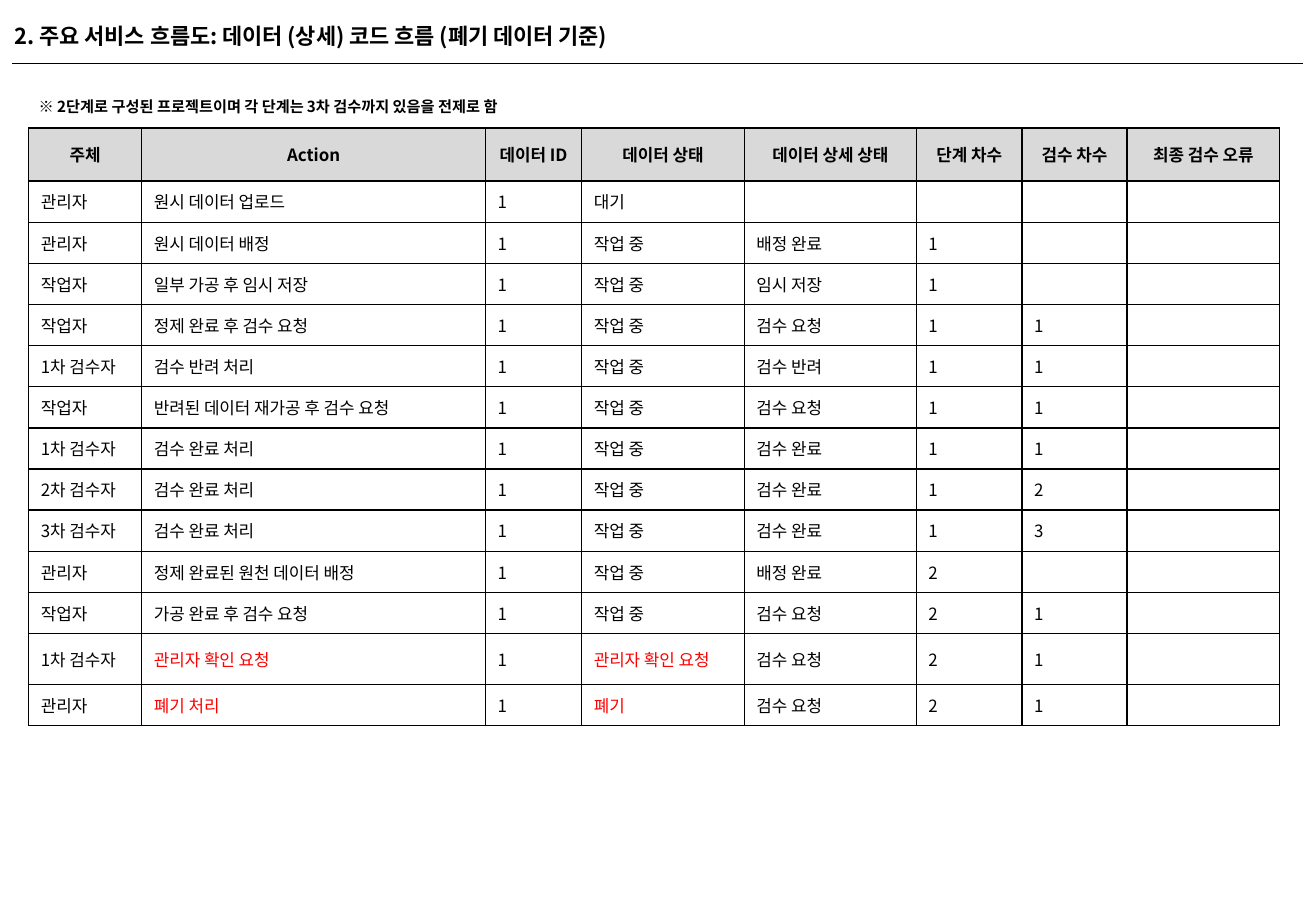
"""Build the slide that lists the data code flow for discarded data."""

from dataclasses import dataclass

from lxml.etree import SubElement
from pptx import Presentation
from pptx.dml.color import RGBColor
from pptx.enum.shapes import MSO_CONNECTOR as Connector
from pptx.enum.text import MSO_ANCHOR as Anchor, MSO_AUTO_SIZE as AutoSize, PP_ALIGN as Align
from pptx.oxml.ns import qn
from pptx.util import Pt

BLACK = RGBColor(0x00, 0x00, 0x00)
RED = RGBColor(0xFF, 0x00, 0x00)
GREY = RGBColor(0xD9, 0xD9, 0xD9)
FONT = "Noto Sans CJK KR"

TITLE = "2. 주요 서비스 흐름도: 데이터 (상세) 코드 흐름 (폐기 데이터 기준)"
NOTE = "※ 2단계로 구성된 프로젝트이며 각 단계는 3차 검수까지 있음을 전제로 함"

TEXT_SIZE = 10
HEADER_HEIGHT = 31.4
ROW_HEIGHT = 24.4
TALL_ROW_HEIGHT = 30.2
BORDER_WIDTH = 1


@dataclass(frozen=True)
class Column:
    heading: str
    width: float


@dataclass(frozen=True)
class Step:
    actor: str
    action: str
    state: str
    detail: str = ""
    stage: str = ""
    review: str = ""
    flagged: bool = False
    height: float = ROW_HEIGHT

    def texts(self) -> list[str]:
        return [self.actor, self.action, "1", self.state, self.detail, self.stage, self.review, ""]

    def colors(self) -> list[RGBColor]:
        accent = RED if self.flagged else BLACK
        return [BLACK, accent, BLACK, accent] + [BLACK] * 4


COLUMNS = [
    Column("주체", 67),
    Column("Action", 203.8),
    Column("데이터 ID", 57),
    Column("데이터 상태", 96.4),
    Column("데이터 상세 상태", 102),
    Column("단계 차수", 62.6),
    Column("검수 차수", 62.2),
    Column("최종 검수 오류", 90.6),
]

STEPS = [
    Step("관리자", "원시 데이터 업로드", "대기"),
    Step("관리자", "원시 데이터 배정", "작업 중", "배정 완료", "1"),
    Step("작업자", "일부 가공 후 임시 저장", "작업 중", "임시 저장", "1"),
    Step("작업자", "정제 완료 후 검수 요청", "작업 중", "검수 요청", "1", "1"),
    Step("1차 검수자", "검수 반려 처리", "작업 중", "검수 반려", "1", "1"),
    Step("작업자", "반려된 데이터 재가공 후 검수 요청", "작업 중", "검수 요청", "1", "1"),
    Step("1차 검수자", "검수 완료 처리", "작업 중", "검수 완료", "1", "1"),
    Step("2차 검수자", "검수 완료 처리", "작업 중", "검수 완료", "1", "2"),
    Step("3차 검수자", "검수 완료 처리", "작업 중", "검수 완료", "1", "3"),
    Step("관리자", "정제 완료된 원천 데이터 배정", "작업 중", "배정 완료", "2"),
    Step("작업자", "가공 완료 후 검수 요청", "작업 중", "검수 요청", "2", "1"),
    Step("1차 검수자", "관리자 확인 요청", "관리자 확인 요청", "검수 요청", "2", "1",
         flagged=True, height=TALL_ROW_HEIGHT),
    Step("관리자", "폐기 처리", "폐기", "검수 요청", "2", "1", flagged=True),
]


def write(frame, text: str, size: float, color: RGBColor = BLACK, bold: bool = False,
          align: Align = Align.LEFT) -> None:
    frame.text = text
    para = frame.paragraphs[0]
    para.alignment = align
    font = para.font
    font.name, font.size, font.bold = FONT, Pt(size), bold
    font.color.rgb = color
    defaults = para._p.pPr.find(qn("a:defRPr"))
    SubElement(defaults, qn("a:ea")).set("typeface", FONT)
    if not text:
        SubElement(para._p, qn("a:endParaRPr")).set("sz", str(size * 100))


def add_borders(cell) -> None:
    properties = cell._tc.get_or_add_tcPr()
    for position, side in enumerate(("a:lnL", "a:lnR", "a:lnT", "a:lnB")):
        line = properties.makeelement(qn(side), {"w": str(Pt(BORDER_WIDTH))})
        SubElement(SubElement(line, qn("a:solidFill")), qn("a:srgbClr")).set("val", str(BLACK))
        properties.insert(position, line)


def add_title(page) -> None:
    title = page.shapes.title
    title.left, title.top, title.width, title.height = Pt(1.4), Pt(9.4), Pt(757.4), Pt(23)
    frame = title.text_frame
    frame.auto_size = AutoSize.NONE
    frame.vertical_anchor = Anchor.MIDDLE
    write(frame, TITLE, 13, bold=True)


def add_rule(page) -> None:
    rule = page.shapes.add_connector(Connector.STRAIGHT, Pt(7.2), Pt(37.6), Pt(772.6), Pt(37.6))
    rule.line.color.rgb = BLACK
    rule.line.width = Pt(0.75)
    SubElement(rule._element.spPr, qn("a:effectLst"))


def add_note(page) -> None:
    box = page.shapes.add_textbox(Pt(15.8), Pt(49), Pt(318.2), Pt(21.6))
    frame = box.text_frame
    frame.word_wrap = False
    write(frame, NOTE, 9, bold=True)
    frame.paragraphs[0].line_spacing = 1.5


def add_flow_table(page) -> None:
    heights = [HEADER_HEIGHT] + [step.height for step in STEPS]
    width = sum(column.width for column in COLUMNS)
    table = page.shapes.add_table(len(heights), len(COLUMNS), Pt(17), Pt(76),
                                  Pt(width), Pt(sum(heights))).table
    table.first_row = table.horz_banding = False
    for row, height in zip(table.rows, heights):
        row.height = Pt(height)
    for index, column in enumerate(COLUMNS):
        table.columns[index].width = Pt(column.width)
        heading = table.cell(0, index)
        heading.fill.solid()
        heading.fill.fore_color.rgb = GREY
        heading.margin_top = heading.margin_bottom = Pt(1)
        write(heading.text_frame, column.heading, TEXT_SIZE, bold=True, align=Align.CENTER)
    for number, step in enumerate(STEPS, start=1):
        for index, (text, color) in enumerate(zip(step.texts(), step.colors())):
            cell = table.cell(number, index)
            cell.fill.background()
            write(cell.text_frame, text, TEXT_SIZE, color)
    for cell in table.iter_cells():
        cell.vertical_anchor = Anchor.MIDDLE
        add_borders(cell)


def main() -> None:
    deck = Presentation()
    deck.slide_width, deck.slide_height = Pt(780), Pt(540)
    page = deck.slides.add_slide(deck.slide_layouts[5])
    add_title(page)
    add_rule(page)
    add_flow_table(page)
    add_note(page)
    deck.save("out.pptx")


if __name__ == "__main__":
    main()
